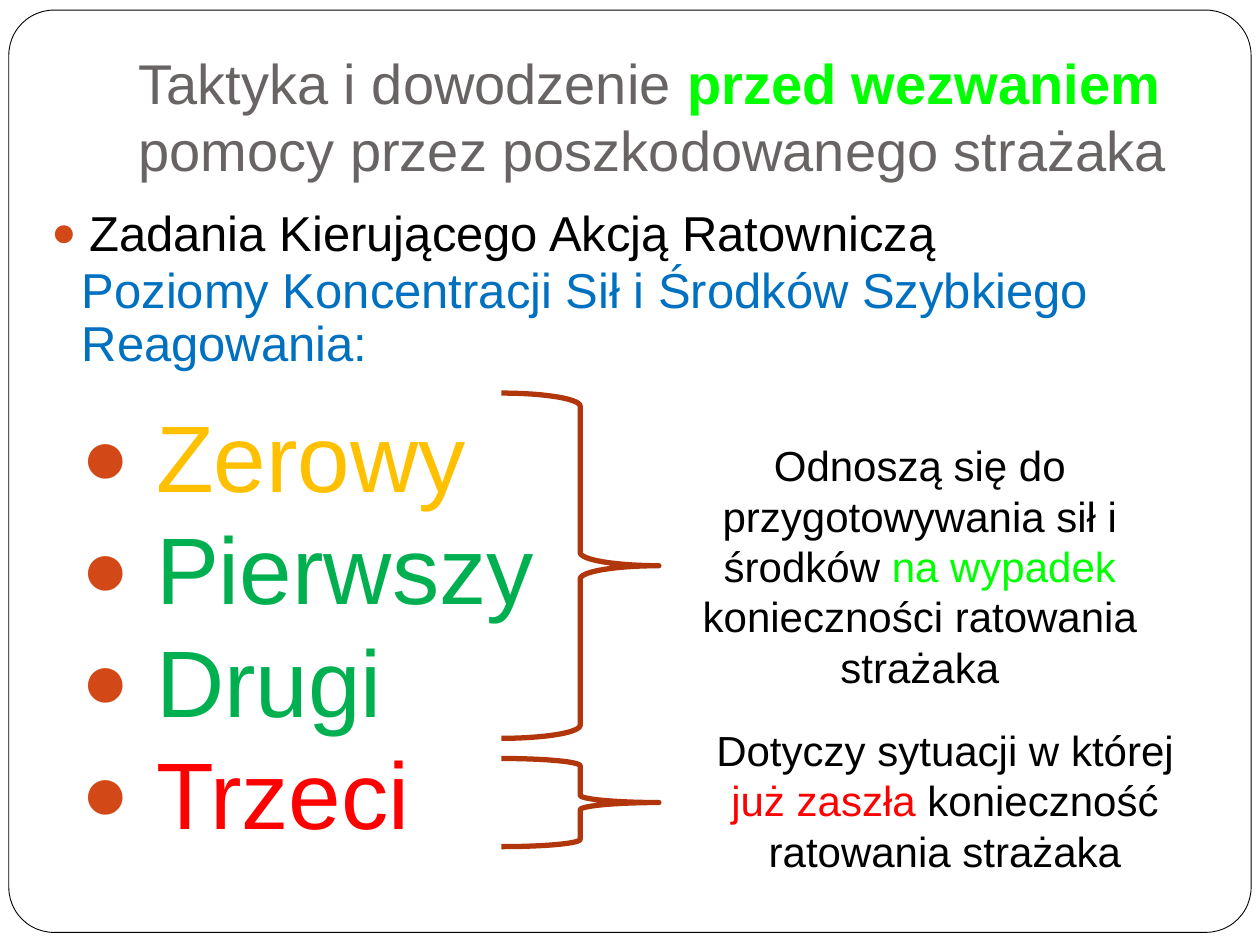
from pptx import Presentation
from pptx.dml.color import RGBColor
from pptx.enum.shapes import MSO_SHAPE as Preset
from pptx.enum.text import MSO_ANCHOR as Anchor, MSO_AUTO_SIZE as AutoSize, PP_ALIGN as Align
from pptx.oxml import parse_xml
from pptx.oxml.ns import nsdecls
from pptx.util import Inches, Pt

WHITE = RGBColor(0xFF, 0xFF, 0xFF)
BLACK = RGBColor(0x00, 0x00, 0x00)
GRAY = RGBColor(0x69, 0x64, 0x64)
LIME = RGBColor(0x00, 0xFF, 0x00)
BLUE = RGBColor(0x00, 0x70, 0xC0)
AMBER = RGBColor(0xFF, 0xC0, 0x00)
GREEN = RGBColor(0x00, 0xB0, 0x50)
RED = RGBColor(0xFF, 0x00, 0x00)
RUST = RGBColor(0xB1, 0x36, 0x0B)
BULLET = RGBColor(0xD3, 0x48, 0x17)


class SlideBuilder:
    font = "Arial"
    space_before = 5.8

    def __init__(self, slide):
        self.slide = slide

    def place(self, shape, box):
        shape.left, shape.top, shape.width, shape.height = map(Inches, box)

    def add_runs(self, paragraph, runs, size):
        """Add runs given as (text, colour) or (text, colour, bold)."""
        for text, color, *bold in runs:
            run = paragraph.add_run()
            run.text = text
            run.font.name = self.font
            run.font.size = Pt(size)
            run.font.color.rgb = color
            run.font.bold = bool(bold and bold[0])

    def bullet(self, paragraph, indent):
        props = paragraph._p.get_or_add_pPr()
        props.set("marL", str(Inches(indent)))
        props.set("indent", str(-Inches(indent)))
        for tag in (
            f'<a:buClr {nsdecls("a")}><a:srgbClr val="{BULLET}"/></a:buClr>',
            f'<a:buSzPct {nsdecls("a")} val="85000"/>',
            f'<a:buFont {nsdecls("a")} typeface="{self.font}"/>',
            f'<a:buChar {nsdecls("a")} char="●"/>',
        ):
            props.append(parse_xml(tag))

    def frame(self, box, rounding):
        panel = self.slide.shapes.add_shape(Preset.ROUNDED_RECTANGLE, *map(Inches, box))
        panel.adjustments[0] = rounding
        panel.shadow.inherit = False
        panel.fill.solid()
        panel.fill.fore_color.rgb = WHITE
        panel.line.color.rgb = BLACK
        panel.line.width = Pt(0.5)
        self.slide.shapes._spTree.insert(2, panel._element)  # behind the title

    def title(self, box, runs, size):
        heading = self.slide.shapes.title
        self.place(heading, box)
        text = heading.text_frame
        text.auto_size = AutoSize.NONE
        text.word_wrap = True
        text.vertical_anchor = Anchor.BOTTOM
        text.margin_bottom = Inches(0.1)
        text.paragraphs[0].alignment = Align.LEFT
        self.add_runs(text.paragraphs[0], runs, size)

    def text_box(self, box, parent=None):
        shapes = parent.shapes if parent is not None else self.slide.shapes
        text = shapes.add_textbox(*map(Inches, box)).text_frame
        text.word_wrap = True
        return text

    def line(self, text, runs, size, indent=0, before=space_before, spacing=None):
        """Fill the first paragraph if it is empty, else add one."""
        first = text.paragraphs[0]
        paragraph = text.add_paragraph() if first.runs else first
        paragraph.space_before = Pt(before)
        if spacing:
            paragraph.line_spacing = spacing
        if indent:
            self.bullet(paragraph, indent)
        self.add_runs(paragraph, runs, size)

    def braced_note(self, brace_box, note_box, runs, size):
        group = self.slide.shapes.add_group_shape()
        brace = group.shapes.add_shape(Preset.RIGHT_BRACE, *map(Inches, brace_box))
        brace.shadow.inherit = False
        brace.fill.background()
        brace.line.color.rgb = RUST
        brace.line.width = Pt(3)
        note = self.text_box(note_box, group).paragraphs[0]
        note.alignment = Align.CENTER
        self.add_runs(note, runs, size)


def main():
    deck = Presentation()
    deck.slide_width, deck.slide_height = Inches(10), Inches(7.5)
    builder = SlideBuilder(deck.slides.add_slide(deck.slide_layouts[5]))

    builder.frame((0.07, 0.08, 9.86, 7.32), 0.049)
    builder.title((1, 0.3, 8.5, 1.25), [
        ("Taktyka i dowodzenie ", GRAY),
        ("przed wezwaniem ", LIME, True),
        ("pomocy przez poszkodowanego strażaka", GRAY),
    ], 32)

    tasks = builder.text_box((0.31, 1.56, 8.5, 0.68))
    builder.line(tasks, [("Zadania Kierującego Akcją Ratowniczą", BLACK)], 28, indent=0.3)

    levels = builder.text_box((0.55, 2.06, 8.95, 5.05))
    builder.line(levels, [
        ("Poziomy Koncentracji Sił i Środków Szybkiego Reagowania:", BLUE),
    ], 28, spacing=0.9)
    names = [("Zerowy", AMBER), ("Pierwszy", GREEN), ("Drugi", GREEN), ("Trzeci", RED)]
    for index, level in enumerate(names):
        before = builder.space_before if index else 22.5
        builder.line(levels, [level], 54, indent=0.59, before=before, spacing=0.9)

    builder.braced_note((3.98, 3.12, 1.25, 2.74), (5.31, 3.44, 3.98, 2.12), [
        ("Odnoszą się do przygotowywania sił i środków ", BLACK),
        ("na wypadek ", LIME),
        ("konieczności ratowania strażaka", BLACK),
    ], 24)
    builder.braced_note((3.98, 6.02, 1.25, 0.7), (5.47, 5.7, 4.06, 1.31), [
        ("Dotyczy sytuacji w której ", BLACK),
        ("już zaszła ", RED),
        ("konieczność ratowania strażaka", BLACK),
    ], 24)

    deck.save("out.pptx")


if __name__ == "__main__":
    main()
